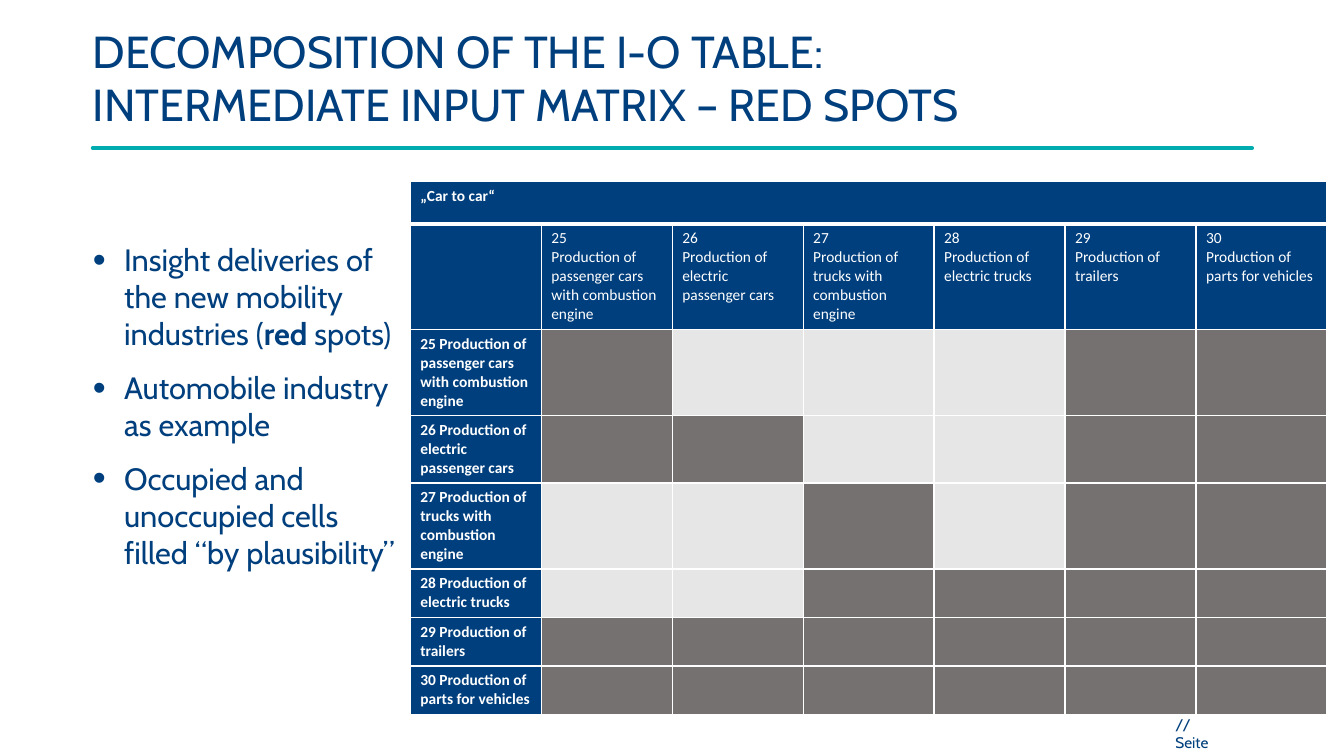
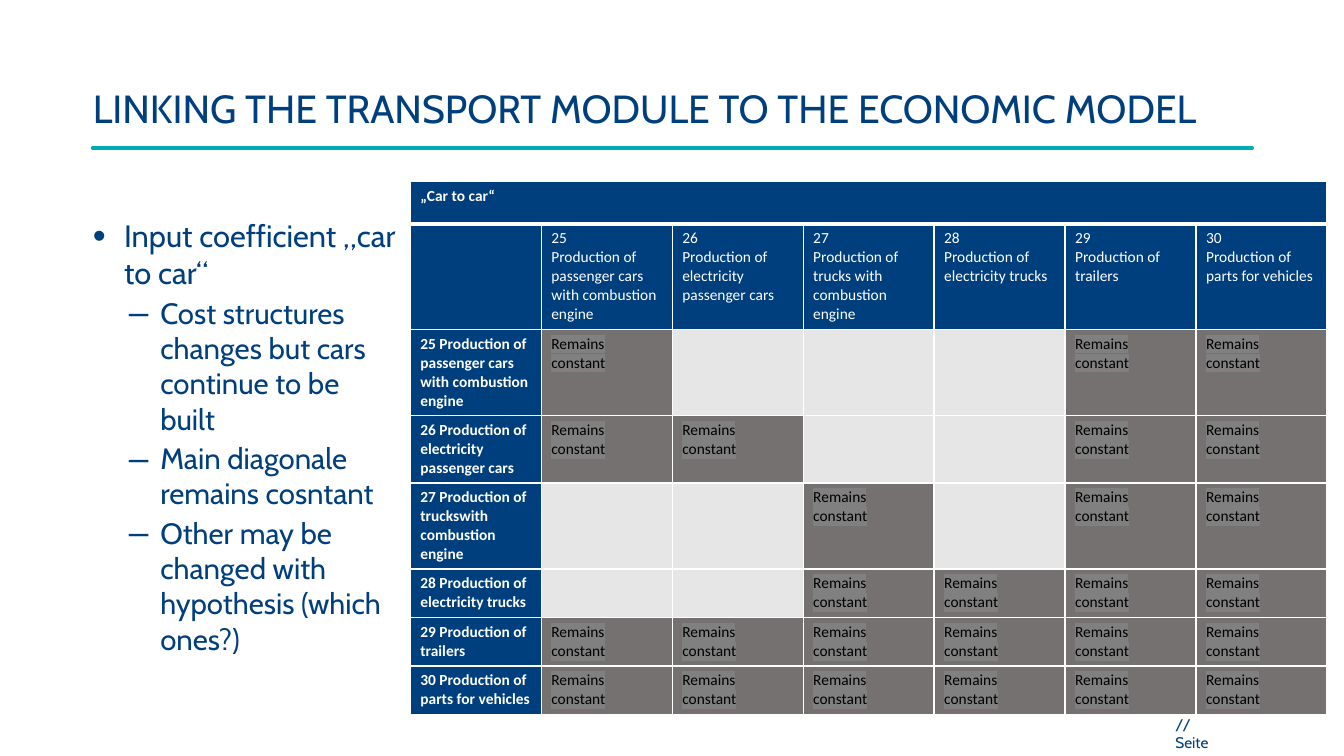
from collections import namedtuple

from lxml import etree
from pptx import Presentation
from pptx.dml.color import RGBColor
from pptx.enum.shapes import MSO_CONNECTOR
from pptx.enum.text import MSO_ANCHOR
from pptx.oxml.ns import qn
from pptx.util import Cm, Pt

STRAIGHT = MSO_CONNECTOR.STRAIGHT
TOP, MIDDLE, BOTTOM = MSO_ANCHOR.TOP, MSO_ANCHOR.MIDDLE, MSO_ANCHOR.BOTTOM

NAVY, TEAL, WHITE, BLACK = "003F7D", "00ACB0", "FFFFFF", "000000"
OCCUPIED, UNOCCUPIED, MARKER = "767171", "E7E6E6", "808080"
HEAD_FONT, TABLE_FONT = "Cabin", "Calibri"

Box = namedtuple("Box", "left top width height")  # centimetres
Level = namedtuple("Level", "bullet size before indent")

TITLE_BOX = Box(2.34, 0.03, 29.21, 3.68)
FOOTER_BOX = Box(29.62, 18.01, 1.42, 1.04)
MATRIX_BOX = Box(10.34, 4.57, 23.1, 13.42)
RULE_Y = 3.73
HANGING = 0.79
LEVELS = (Level("•", 22, 12, 0.79), Level("–", 21, 3, 1.7))

ROW_HEIGHTS = (1.07, 2.66, 2.17, 1.7, 2.17, 1.22, 1.22, 1.22)
FIRST_INDUSTRY = 25
# One string per supplying industry: x marks an occupied cell.
OCCUPANCY = ("x...xx", "xx..xx", "..x.xx", "..xxxx", "xxxxxx", "xxxxxx")


def rgb(hex_text):
    return RGBColor.from_string(hex_text)


def industry_names(drive):
    return [
        "Production of passenger cars with combustion engine",
        f"Production of {drive} passenger cars",
        "Production of trucks with combustion engine",
        f"Production of {drive} trucks",
        "Production of trailers",
        "Production of parts for vehicles",
    ]


def add_span(para, text, size, color=NAVY, font=HEAD_FONT, bold=False):
    span = para.add_run()
    span.text = text
    span.font.size = Pt(size)
    span.font.name = font
    span.font.bold = bold
    span.font.color.rgb = rgb(color)
    return span


def add_lines(para, lines, size):
    """Write the lines into one paragraph, parted by line breaks."""
    for index, line in enumerate(lines):
        if index:
            para.add_line_break()
        add_span(para, line, size)


def add_frame(page, box, anchor=TOP, bottom=0):
    shape = page.shapes.add_textbox(*(Cm(value) for value in box))
    frame = shape.text_frame
    frame.word_wrap = True
    frame.vertical_anchor = anchor
    frame.margin_left = frame.margin_right = frame.margin_top = 0
    frame.margin_bottom = Cm(bottom)
    return frame


def add_bullet(para, level):
    props = para._p.get_or_add_pPr()
    props.set("marL", str(Cm(level.indent)))
    props.set("indent", str(-Cm(HANGING)))
    etree.SubElement(props, qn("a:buSzPct"), val="120000")
    etree.SubElement(props, qn("a:buFont"), typeface="Arial")
    etree.SubElement(props, qn("a:buChar"), char=level.bullet)


def add_rule(page, box):
    """Draw the teal line below the title box."""
    rule = page.shapes.add_connector(
        STRAIGHT, Cm(box.left), Cm(RULE_Y), Cm(box.left + box.width), Cm(RULE_Y))
    rule.line.color.rgb = rgb(TEAL)
    rule.line.width = Pt(3)
    rule.line._get_or_add_ln().set("cap", "rnd")
    etree.SubElement(rule._element.spPr, qn("a:effectLst"))


def add_page(deck, title_lines, title_size):
    """Start a page with the shared rule, footer and title."""
    page = deck.slides.add_slide(deck.slide_layouts[6])
    add_rule(page, TITLE_BOX)
    footer = add_frame(page, FOOTER_BOX)
    add_lines(footer.paragraphs[0], ("//", "Seite"), 11)
    title = add_frame(page, TITLE_BOX, BOTTOM, 0.41)
    add_lines(title.paragraphs[0], title_lines, title_size)
    return page


def add_bullets(page, box, items):
    """Place (level number, [(text, bold), ...]) items, centred vertically."""
    frame = add_frame(page, box, MIDDLE)
    for index, (number, parts) in enumerate(items):
        level = LEVELS[number]
        para = frame.add_paragraph() if index else frame.paragraphs[0]
        add_bullet(para, level)
        if index:
            para.space_before = Pt(level.before)
        for text, bold in parts:
            add_span(para, text, level.size, bold=bold)


def set_borders(cell, top=1, bottom=1):
    props = cell._tc.get_or_add_tcPr()
    sides = (("lnL", 1), ("lnR", 1), ("lnT", top), ("lnB", bottom))
    for index, (side, width) in enumerate(sides):
        line = etree.Element(qn(f"a:{side}"), w=str(Pt(width)))
        fill = etree.SubElement(line, qn("a:solidFill"))
        etree.SubElement(fill, qn("a:srgbClr"), val=WHITE)
        props.insert(index, line)


def fill_cell(cell, color, lines=(), text_color=WHITE, bold=False, marker=None):
    """Colour a cell and write one paragraph per line."""
    cell.fill.solid()
    cell.fill.fore_color.rgb = rgb(color)
    frame = cell.text_frame
    for index, line in enumerate(lines):
        para = frame.add_paragraph() if index else frame.paragraphs[0]
        span = add_span(para, line, 11, text_color, TABLE_FONT, bold)
        if marker:
            highlight = etree.Element(qn("a:highlight"))
            etree.SubElement(highlight, qn("a:srgbClr"), val=marker)
            span._r.rPr.find(qn("a:solidFill")).addnext(highlight)


def add_matrix(page, box, column_names, row_names, entry=()):
    """Place the industry matrix; entry is the text of occupied cells."""
    row_count, column_count = len(row_names) + 2, len(column_names) + 1
    table = page.shapes.add_table(
        row_count, column_count, *(Cm(value) for value in box)).table
    table.first_row = table.horz_banding = False
    for column in table.columns:
        column.width = Cm(box.width / column_count)
    for row, height in zip(table.rows, ROW_HEIGHTS):
        row.height = Cm(height)

    table.cell(0, 0).merge(table.cell(0, column_count - 1))
    for column in range(column_count):
        fill_cell(table.cell(0, column), NAVY)
    fill_cell(table.cell(0, 0), NAVY, ["„Car to car“"], bold=True)
    fill_cell(table.cell(1, 0), NAVY)
    for index, name in enumerate(column_names):
        number = str(FIRST_INDUSTRY + index)
        fill_cell(table.cell(1, index + 1), NAVY, [number, name])
    for index, (name, marks) in enumerate(zip(row_names, OCCUPANCY)):
        label = f"{FIRST_INDUSTRY + index} {name}"
        fill_cell(table.cell(index + 2, 0), NAVY, [label], bold=True)
        for column, mark in enumerate(marks, start=1):
            cell = table.cell(index + 2, column)
            if mark == "x":
                fill_cell(cell, OCCUPIED, entry, BLACK, marker=MARKER)
            else:
                fill_cell(cell, UNOCCUPIED)

    for row in range(row_count):
        for column in range(column_count):
            set_borders(table.cell(row, column),
                        top=3 if row == 1 else 1, bottom=3 if row == 0 else 1)


def build_red_spots(deck):
    page = add_page(deck, ("DECOMPOSITION OF THE I-O TABLE:",
                           "INTERMEDIATE INPUT MATRIX – RED SPOTS"), 32)
    add_bullets(page, Box(2.34, 3.28, 7.72, 13.89), [
        (0, [("Insight deliveries of the new mobility industries (", False),
             ("red", True), (" spots)", False)]),
        (0, [("Automobile industry as example", False)]),
        (0, [("Occupied and unoccupied cells filled “by plausibility”", False)]),
    ])
    names = industry_names("electric")
    add_matrix(page, MATRIX_BOX, names, names)


def build_transport_link(deck):
    page = add_page(
        deck, ("LINKING THE TRANSPORT MODULE TO THE ECONOMIC MODEL",), 28)
    add_bullets(page, Box(2.34, 4.83, 7.72, 12.34), [
        (0, [("Input coefficient „car to car“", False)]),
        (1, [("Cost structures changes but cars continue to be built", False)]),
        (1, [("Main diagonale remains cosntant", False)]),
        (1, [("Other may be changed with hypothesis (which ones?)", False)]),
    ])
    names = industry_names("electricity")
    row_names = [name.replace("trucks with", "truckswith") for name in names]
    add_matrix(page, MATRIX_BOX, names, row_names, ["Remains constant"])


def main():
    deck = Presentation()
    deck.slide_width, deck.slide_height = Cm(33.87), Cm(19.05)
    build_red_spots(deck)
    build_transport_link(deck)
    deck.save("out.pptx")


if __name__ == "__main__":
    main()
